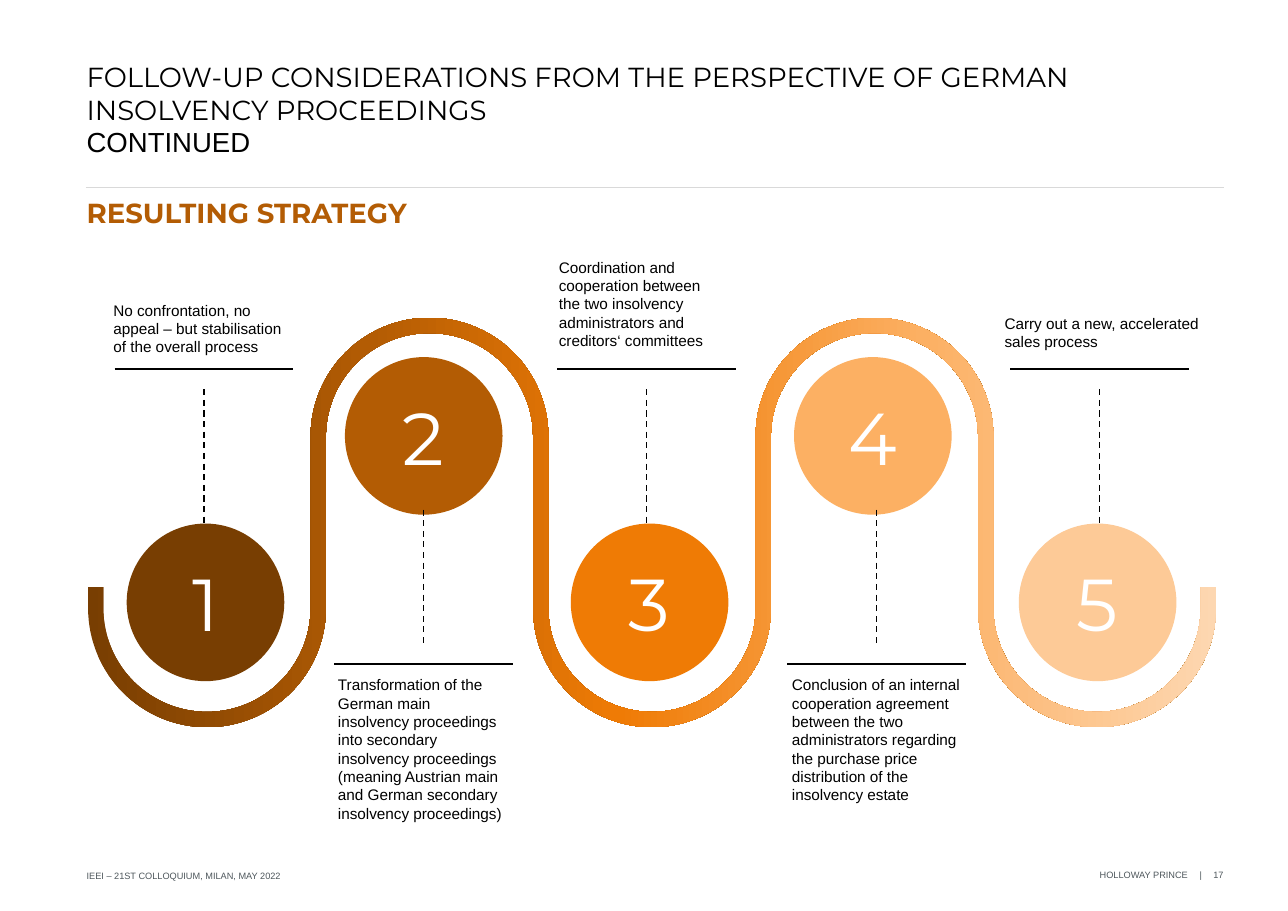
"""Build the slide on the resulting strategy: five numbered steps along a winding ribbon."""
import math

from lxml import etree
from pptx import Presentation
from pptx import util as u
from pptx.dml.color import RGBColor
from pptx.enum import dml, shapes, text
from pptx.oxml import ns

COLOURS = {
    "black": "000000", "white": "FFFFFF", "footer": "4E575C", "divider": "D9D9D9",
    "brown": "783E02", "rust": "B35C04", "orange": "EF7B05",
    "apricot": "FCB063", "peach": "FDCA97", "cream": "FDD7B1",
}

presentation = Presentation()
presentation.slide_width, presentation.slide_height = u.Pt(841.7), u.Pt(595.4)
slide = presentation.slides.add_slide(presentation.slide_layouts[6])


def write(shape, words, size, colour, font="Arial", align="LEFT", anchor="TOP",
          inset=(0, 0), bold=False, spacing=1.0):
    frame = shape.text_frame
    frame.word_wrap = True
    frame.margin_left = frame.margin_right = u.Pt(inset[0])
    frame.margin_top = frame.margin_bottom = u.Pt(inset[1])
    frame.vertical_anchor = text.MSO_ANCHOR[anchor]
    paragraph = frame.paragraphs[0]
    paragraph.alignment = text.PP_ALIGN[align]
    paragraph.line_spacing = spacing
    run = paragraph.add_run()
    run.text = words
    run.font.name, run.font.size, run.font.bold = font, u.Pt(size), bold
    run.font.color.rgb = RGBColor.from_string(COLOURS[colour])


def draw_line(start_x, start_y, end_x, end_y, colour="black", width=1, dashed=False):
    connector = slide.shapes.add_connector(
        shapes.MSO_CONNECTOR.STRAIGHT,
        u.Pt(start_x), u.Pt(start_y), u.Pt(end_x), u.Pt(end_y))
    connector.line.color.rgb = RGBColor.from_string(COLOURS[colour])
    connector.line.width = u.Pt(width)
    if dashed:
        connector.line.dash_style = dml.MSO_LINE.DASH
    etree.SubElement(connector._element.spPr, ns.qn("a:effectLst"))


footer = {"anchor": "MIDDLE"}
footer_right = {"anchor": "MIDDLE", "align": "RIGHT"}
texts = [
    (56.6, 39.1, 743, 26.6, 18, "black", {"font": "Montserrat"},
     "FOLLOW-UP CONSIDERATIONS FROM THE PERSPECTIVE OF GERMAN INSOLVENCY PROCEEDINGS"),
    (56.6, 79.3, 489, 46, 18, "black", {"spacing": 1.1}, "CONTINUED"),
    (56.6, 126, 743, 31.7, 18, "rust",
     {"font": "Montserrat", "bold": True, "spacing": 1.1}, "RESULTING STRATEGY"),
    (56.6, 565, 489, 14.4, 6, "footer", footer, "IEEI – 21ST COLLOQUIUM, MILAN, MAY 2022"),
    (596.2, 564.5, 180, 14.4, 6, "footer", footer_right, "HOLLOWAY PRINCE"),
    (771.1, 564.5, 14.4, 14.4, 6, "footer", footer_right, "|"),
    (763, 564.5, 36.5, 14.4, 6, "footer", footer_right, "17"),
]
for left, top, width, height, size, colour, style, words in texts:
    box = slide.shapes.add_textbox(u.Pt(left), u.Pt(top), u.Pt(width), u.Pt(height))
    write(box, words, size, colour, **style)
draw_line(56.2, 122.4, 799.9, 122.4, "divider", 0.5)

FIRST_CENTRE, PITCH, HALF_BAND = 135.3, 145.4, 5
UPPER_CENTRE, LOWER_CENTRE, RIBBON_END = 285.4, 397.6, 383.8
UNITS = 100
middle = FIRST_CENTRE + 2 * PITCH
segments = []
for side in (1, -1):
    reach = 2.5 * PITCH + side * HALF_BAND
    segments.append([(middle - side * reach, RIBBON_END)])
    turn = math.radians(-45 * side)
    handle = 4 / 3 * math.tan(turn / 4)
    for bend in range(5)[::side]:
        direction = 1 if bend % 2 == 0 else -1
        radius = PITCH / 2 + side * direction * HALF_BAND
        centre_x = FIRST_CENTRE + bend * PITCH
        centre_y = LOWER_CENTRE if direction == 1 else UPPER_CENTRE
        segments.append([(centre_x - side * radius, centre_y)])
        for part in range(4):
            start = (math.pi if side == 1 else 0) + part * turn
            end = start + turn
            offsets = [
                (math.cos(start) - handle * math.sin(start), math.sin(start) + handle * math.cos(start)),
                (math.cos(end) + handle * math.sin(end), math.sin(end) - handle * math.cos(end)),
                (math.cos(end), math.sin(end)),
            ]
            segments.append([(centre_x + radius * x, centre_y + direction * radius * y)
                             for x, y in offsets])
    segments.append([(middle + side * reach, RIBBON_END)])
segments = [[(round(x * UNITS), round(y * UNITS)) for x, y in segment] for segment in segments]
corners = [segment[-1] for segment in segments]
builder = slide.shapes.build_freeform(*corners[0], scale=u.Pt(1) / UNITS)
builder.add_line_segments(corners[1:], close=True)
ribbon = builder.convert_to_shape()
ribbon_left, ribbon_top = (min(values) for values in zip(*corners))
nodes = ribbon._element.spPr.findall(".//" + ns.qn("a:lnTo"))
for node, segment in zip(nodes, segments[1:]):
    if len(segment) == 3:
        node.tag = ns.qn("a:cubicBezTo")
        for position, (x, y) in enumerate(segment[:2]):
            node.insert(position, etree.Element(
                ns.qn("a:pt"), x=str(x - ribbon_left), y=str(y - ribbon_top)))
ribbon.shadow.inherit = False
ribbon.line.fill.background()
ribbon.fill.gradient()
ribbon.fill.gradient_angle = 0
stops = ribbon._element.spPr.find(".//" + ns.qn("a:gsLst"))
stops.clear()
for percent, colour in ((0, "brown"), (25, "rust"), (47, "orange"), (74, "apricot"), (100, "cream")):
    stop = etree.SubElement(stops, ns.qn("a:gs"), pos=str(percent * 1000))
    etree.SubElement(stop, ns.qn("a:srgbClr"), val=COLOURS[colour])

CIRCLE, HALF_RULE = 103, 58.3
steps = [
    ("brown", 82.8, 133.2, (67, 193, 131),
     "No confrontation, no appeal – but stabilisation of the overall process"),
    ("rust", 225.4, 276.7, (213.8, 437.8, 121.7),
     "Transformation of the German main insolvency proceedings into secondary insolvency "
     "proceedings (meaning Austrian main and German secondary insolvency proceedings)"),
    ("orange", 373, 422.6, (358.1, 164.9, 121),
     "Coordination and cooperation between the two insolvency administrators and "
     "creditors‘ committees"),
    ("apricot", 518.9, 572.9, (510.5, 437.8, 134.6),
     "Conclusion of an internal cooperation agreement between the two administrators "
     "regarding the purchase price distribution of the insolvency estate"),
    ("peach", 665.8, 718.6, (649.4, 201.6, 166.3),
     "Carry out a new, accelerated sales process"),
]
for number, (colour, left, stem_x, label_place, words) in enumerate(steps, start=1):
    if number % 2:
        circle_top, stem_top, stem_bottom, rule_y = 342.2, 254.4, 342.4, 241.2
    else:
        circle_top, stem_top, stem_bottom, rule_y = 233.4, 333, 421.6, 434
    circle = slide.shapes.add_shape(
        shapes.MSO_SHAPE.OVAL, u.Pt(left), u.Pt(circle_top), u.Pt(CIRCLE), u.Pt(CIRCLE))
    circle.shadow.inherit = False
    circle.fill.solid()
    circle.fill.fore_color.rgb = RGBColor.from_string(COLOURS[colour])
    circle.line.fill.background()
    write(circle, str(number), 48, "white", "Montserrat", "CENTER", "MIDDLE", (2, 2))
    draw_line(stem_x, stem_top, stem_x, stem_bottom, dashed=True)
    draw_line(stem_x - HALF_RULE, rule_y, stem_x + HALF_RULE, rule_y)
    label_left, label_top, label_width = label_place
    label = slide.shapes.add_textbox(
        u.Pt(label_left), u.Pt(label_top), u.Pt(label_width), u.Pt(32))
    write(label, words, 10, "black", inset=(7.2, 3.6))
    label.text_frame.auto_size = text.MSO_AUTO_SIZE.SHAPE_TO_FIT_TEXT

presentation.save("out.pptx")
